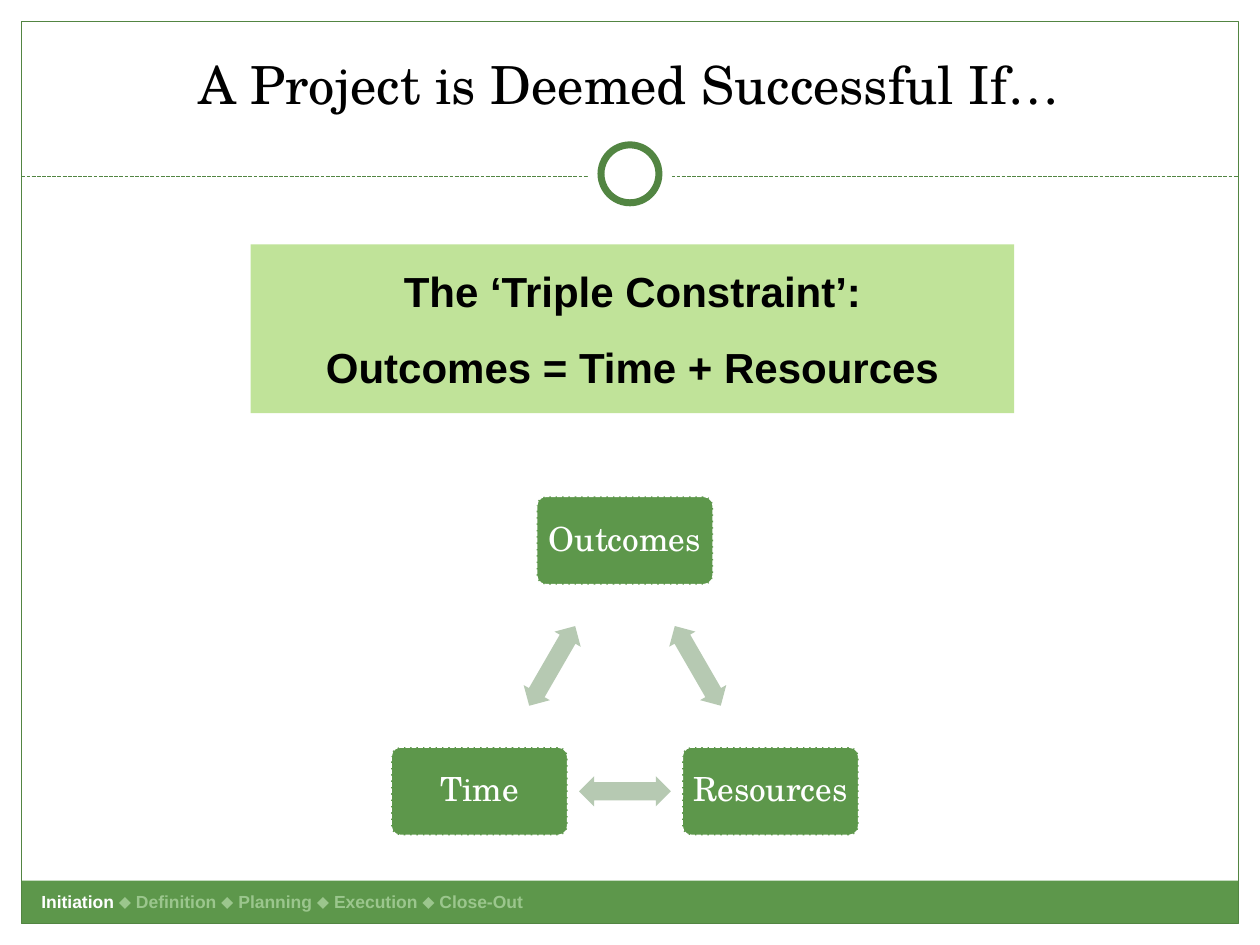
from math import atan2, degrees

from lxml import etree
from pptx import Presentation
from pptx.dml.color import RGBColor
from pptx.enum.dml import MSO_LINE
from pptx.enum.shapes import MSO_CONNECTOR, MSO_SHAPE
from pptx.enum.text import MSO_ANCHOR, PP_ALIGN
from pptx.oxml.ns import qn
from pptx.util import Inches, Pt

RECT, OVAL = MSO_SHAPE.RECTANGLE, MSO_SHAPE.OVAL
ROUNDED, ARROW = MSO_SHAPE.ROUNDED_RECTANGLE, MSO_SHAPE.LEFT_RIGHT_ARROW
DASH = MSO_LINE.SQUARE_DOT
CENTER, LEFT = PP_ALIGN.CENTER, PP_ALIGN.LEFT
MIDDLE = MSO_ANCHOR.MIDDLE

WIDTH, HEIGHT = 10, 7.5
MARGIN = 0.17
RULE_Y = 1.4
RING_Y = 1.38
FOOTER_HEIGHT = 0.34
NODE_WIDTH, NODE_HEIGHT = 1.4, 0.7
ARROW_WIDTH, ARROW_HEIGHT = 0.73, 0.24
CYCLE_X, CYCLE_TOP, CYCLE_BOTTOM, CYCLE_HALF = 4.96, 4.29, 6.28, 1.155

SERIF, SANS = "TeX Gyre Schola", "Arial"
GREEN, DARK_GREEN, PALE_GREEN = "5D974B", "528542", "C0E399"
ARROW_GREEN, MUTED_GREEN = "B6C9B2", "9BC68D"
WHITE, BLACK = "FFFFFF", "000000"


def rgb(color):
    return RGBColor.from_string(color)


def place(shape, left, top, width, height):
    shape.left, shape.top = Inches(left), Inches(top)
    shape.width, shape.height = Inches(width), Inches(height)


def style_line(line, color, width, dash=None):
    line.color.rgb = rgb(color)
    line.width = Pt(width)
    if dash is not None:
        line.dash_style = dash


def add_panel(page, kind, area, fill=None, line=None):
    """Add a preset shape; line is (colour, width[, dash])."""
    shape = page.shapes.add_shape(kind, *map(Inches, area))
    shape.shadow.inherit = False
    if fill:
        shape.fill.solid()
        shape.fill.fore_color.rgb = rgb(fill)
    else:
        shape.fill.background()
    if line:
        style_line(shape.line, *line)
    else:
        shape.line.fill.background()
    return shape


def add_centered(page, kind, x, y, width, height, **style):
    area = (x - width / 2, y - height / 2, width, height)
    return add_panel(page, kind, area, **style)


def write(para, spans, size, font, bold=False, align=CENTER):
    """Fill a paragraph with (text, colour) runs."""
    para.alignment = align
    for text, color in spans:
        span = para.add_run()
        span.text = text
        span.font.size = Pt(size)
        span.font.name = font
        span.font.bold = bold
        span.font.color.rgb = rgb(color)


def add_frame(page):
    add_panel(page, RECT, (MARGIN, HEIGHT - MARGIN - FOOTER_HEIGHT,
                           WIDTH - 2 * MARGIN, FOOTER_HEIGHT), fill=GREEN)
    add_panel(page, RECT, (MARGIN, MARGIN, WIDTH - 2 * MARGIN,
                           HEIGHT - 2 * MARGIN), line=(DARK_GREEN, 0.75))
    rule = page.shapes.add_connector(
        MSO_CONNECTOR.STRAIGHT, Inches(MARGIN), Inches(RULE_Y),
        Inches(WIDTH - MARGIN), Inches(RULE_Y))
    style_line(rule.line, DARK_GREEN, 0.75, DASH)
    etree.SubElement(rule._element.spPr, qn("a:effectLst"))
    add_centered(page, OVAL, WIDTH / 2, RING_Y, 0.67, 0.67, fill=WHITE)
    add_centered(page, OVAL, WIDTH / 2, RING_Y, 0.46, 0.46, fill=WHITE,
                 line=(DARK_GREEN, 4))


def add_title(page, text):
    title = page.shapes.title
    place(title, 0.33, 0.25, 9.33, 0.83)
    title.text_frame.vertical_anchor = MIDDLE
    write(title.text_frame.paragraphs[0], [(text, BLACK)], 30, SERIF)


def add_stages(page, current, others):
    box = page.shapes.add_textbox(*map(Inches, (0.23, 7.02, 4.3, 0.27)))
    box.text_frame.word_wrap = True
    rest = " ".join(f"⬥ {stage}" for stage in others)
    write(box.text_frame.paragraphs[0],
          [(current + " ", WHITE), (rest, MUTED_GREEN)], 10, SANS, True, LEFT)


def add_node(page, text, x, y):
    node = add_centered(page, ROUNDED, x, y, NODE_WIDTH, NODE_HEIGHT,
                        fill=GREEN, line=(WHITE, 0.9, DASH))
    node.adjustments[0] = 0.1
    frame = node.text_frame
    frame.margin_left = frame.margin_right = Inches(0.03)
    frame.vertical_anchor = MIDDLE
    frame.paragraphs[0].line_spacing = 0.9
    write(frame.paragraphs[0], [(text, WHITE)], 19, SERIF)


def add_link(page, start, end):
    """Put a double arrow halfway between two node centres."""
    (x1, y1), (x2, y2) = start, end
    arrow = add_centered(page, ARROW, (x1 + x2) / 2, (y1 + y2) / 2,
                         ARROW_WIDTH, ARROW_HEIGHT, fill=ARROW_GREEN)
    arrow.adjustments[0], arrow.adjustments[1] = 0.6, 0.5
    arrow.rotation = round(degrees(atan2(y2 - y1, x2 - x1))) % 360


def add_cycle(page, labels):
    centers = [(CYCLE_X, CYCLE_TOP),
               (CYCLE_X + CYCLE_HALF, CYCLE_BOTTOM),
               (CYCLE_X - CYCLE_HALF, CYCLE_BOTTOM)]
    following = centers[1:] + centers[:1]
    for label, center, neighbour in zip(labels, centers, following):
        add_node(page, label, *center)
        add_link(page, center, neighbour)


def add_banner(page, heading, formula):
    banner = add_panel(page, RECT, (1.99, 1.94, 6.06, 1.34), fill=PALE_GREEN)
    frame = banner.text_frame
    frame.vertical_anchor = MIDDLE
    write(frame.paragraphs[0], [(heading, BLACK)], 24, SANS, True)
    para = frame.add_paragraph()
    para.line_spacing = 1.5
    write(para, [(formula, BLACK)], 24, SANS, True)


def main():
    deck = Presentation()
    deck.slide_width, deck.slide_height = Inches(WIDTH), Inches(HEIGHT)
    page = deck.slides.add_slide(deck.slide_layouts[5])
    add_frame(page)
    add_title(page, "A Project is Deemed Successful If…")
    add_stages(page, "Initiation",
               ["Definition", "Planning", "Execution", "Close-Out"])
    add_cycle(page, ["Outcomes", "Resources", "Time"])
    add_banner(page, "The ‘Triple Constraint’:",
               "Outcomes = Time + Resources")
    deck.save("out.pptx")


if __name__ == "__main__":
    main()
